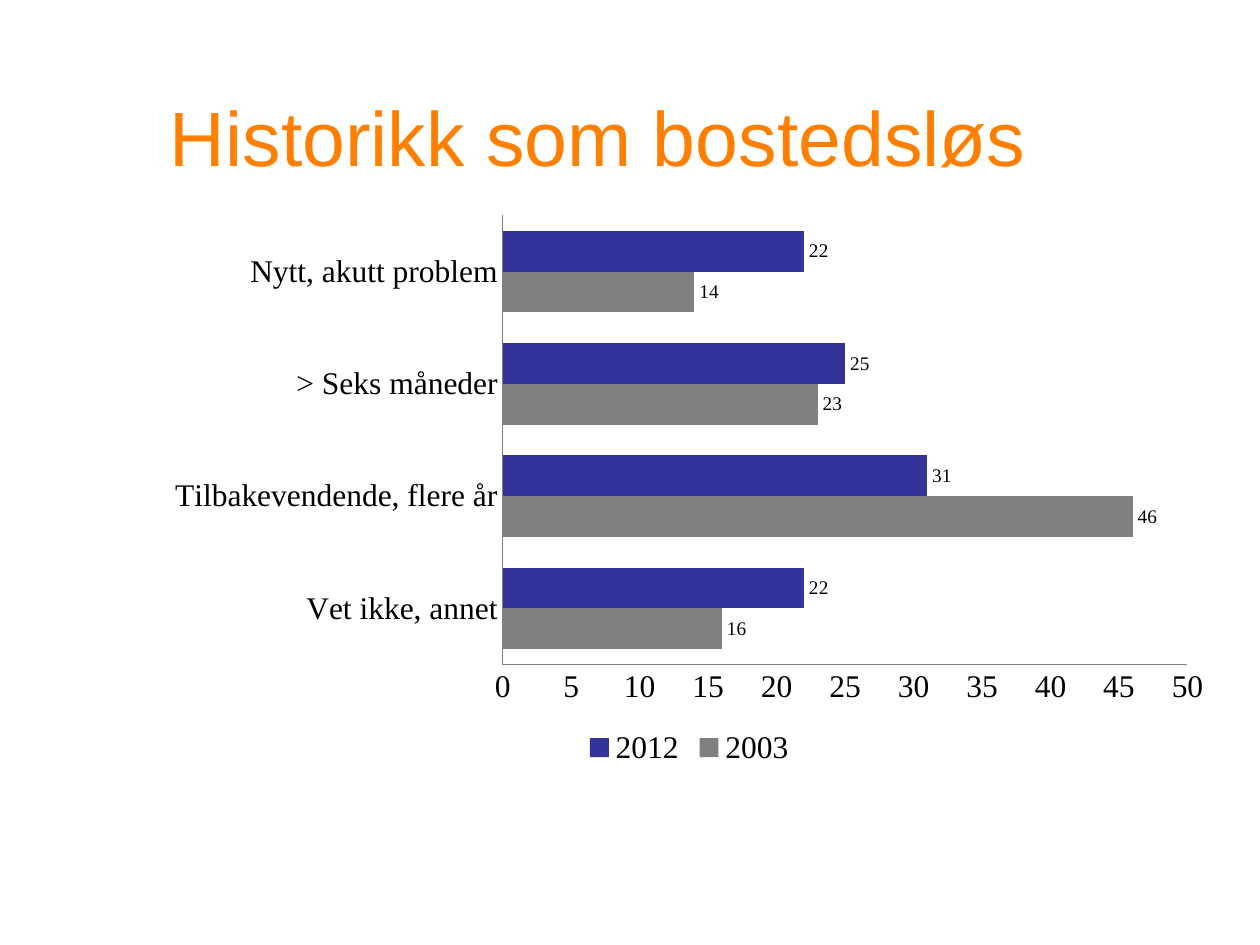
from pptx import Presentation
from pptx.chart.data import CategoryChartData
from pptx.dml.color import RGBColor
from pptx.enum.chart import XL_CHART_TYPE as ChartType
from pptx.enum.chart import XL_LABEL_POSITION as LabelPos
from pptx.enum.chart import XL_LEGEND_POSITION as LegendPos
from pptx.enum.chart import XL_TICK_MARK as TickMark
from pptx.enum.text import MSO_ANCHOR as Anchor
from pptx.util import Inches, Pt


def color(hex_code):
    return RGBColor.from_string(hex_code)


class SlideBuilder:
    """Holds the style and the current slide; boxes are shares of its size."""

    TITLE_FONT, CHART_FONT = "Arial", "Times New Roman"
    ORANGE, BLACK, GREY = "FF8000", "000000", "808080"

    def __init__(self, deck):
        self.width, self.height = deck.slide_width, deck.slide_height
        self.slide = deck.slides.add_slide(deck.slide_layouts[6])

    def box(self, left, top, width, height):
        return (int(left * self.width), int(top * self.height),
                int(width * self.width), int(height * self.height))

    def style(self, font, name, size, hex_code):
        font.name, font.size = name, Pt(size)
        font.color.rgb = color(hex_code)

    def title(self, wording, *shares):
        frame = self.slide.shapes.add_textbox(*self.box(*shares)).text_frame
        frame.word_wrap = True
        frame.vertical_anchor = Anchor.MIDDLE
        heading = frame.paragraphs[0]
        heading.text = wording
        self.style(heading.font, self.TITLE_FONT, 44, self.ORANGE)

    def bar_chart(self, categories, series, *shares):
        """Draw clustered bars; series holds (name, values, colour)."""
        figures = CategoryChartData(number_format="0")
        figures.categories = categories
        for name, values, _ in series:
            figures.add_series(name, values)
        chart = self.slide.shapes.add_chart(
            ChartType.BAR_CLUSTERED, *self.box(*shares), figures).chart
        chart.has_title = False
        self.style(chart.font, self.CHART_FONT, 18, self.BLACK)

        # Bars and their value labels
        plot = chart.plots[0]
        plot.gap_width, plot.overlap = 75, 0
        plot.vary_by_categories = False
        for bars, (_, _, hex_code) in zip(plot.series, series):
            bars.format.fill.solid()
            bars.format.fill.fore_color.rgb = color(hex_code)
            labels = bars.data_labels
            labels.show_value = True
            labels.position = LabelPos.OUTSIDE_END
            self.style(labels.font, self.CHART_FONT, 11, self.BLACK)

        # Axes
        for axis in (chart.category_axis, chart.value_axis):
            axis.has_major_gridlines = False
            axis.major_tick_mark = axis.minor_tick_mark = TickMark.NONE
            axis.format.line.color.rgb = color(self.GREY)
        scale = chart.value_axis
        scale.minimum_scale, scale.maximum_scale, scale.major_unit = 0, 50, 5

        # Legend
        chart.has_legend = True
        chart.legend.position = LegendPos.BOTTOM
        chart.legend.include_in_layout = False


def main():
    deck = Presentation()
    deck.slide_width, deck.slide_height = Inches(10), Inches(7.5)
    page = SlideBuilder(deck)

    page.title("Historikk som bostedsløs", 0.125, 0.09, 0.85, 0.107)
    page.bar_chart(
        ["Vet ikke, annet", "Tilbakevendende, flere år",
         "> Seks måneder", "Nytt, akutt problem"],
        [("2003", (16, 46, 23, 14), "808080"),
         ("2012", (22, 31, 25, 22), "333399")],
        0.122, 0.216, 0.85, 0.6)

    deck.save("out.pptx")


if __name__ == "__main__":
    main()
